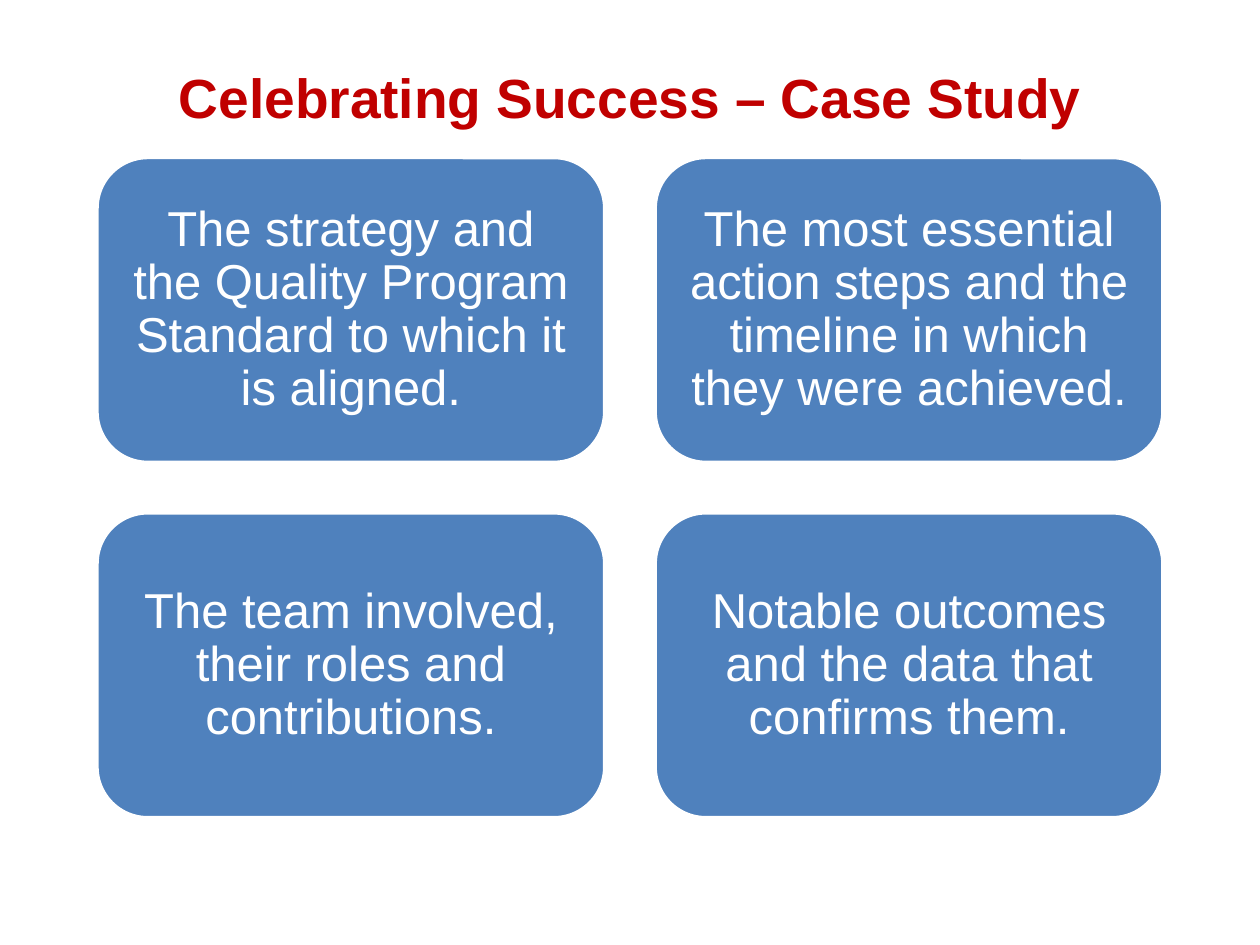
from dataclasses import dataclass

from pptx import Presentation
from pptx.dml.color import RGBColor
from pptx.enum.shapes import MSO_SHAPE
from pptx.enum.text import MSO_ANCHOR, PP_ALIGN
from pptx.util import Inches, Pt


@dataclass(frozen=True)
class Theme:
    font: str = "Arial"
    title_color: RGBColor = RGBColor(0xC0, 0x00, 0x00)
    card_color: RGBColor = RGBColor(0x4F, 0x81, 0xBD)
    light: RGBColor = RGBColor(0xFF, 0xFF, 0xFF)
    title_size: float = 31.5
    card_size: float = 28


@dataclass(frozen=True)
class Grid:
    left: float = 0.77
    top: float = 1.25
    card_width: float = 4.03
    card_height: float = 2.42
    gap: float = 0.4

    def place(self, column, row):
        left = self.left + column * (self.card_width + self.gap)
        top = self.top + row * (self.card_height + self.gap)
        return [Inches(value) for value in (left, top, self.card_width, self.card_height)]


class SlideBuilder:
    def __init__(self, slide, theme, grid):
        self.slide = slide
        self.theme = theme
        self.grid = grid

    def set_text(self, shape, text, size, color, margin=0, bold=False):
        text_frame = shape.text_frame
        text_frame.text = text
        text_frame.word_wrap = True
        text_frame.margin_left = text_frame.margin_right = Inches(margin)
        text_frame.margin_top = text_frame.margin_bottom = Inches(margin)
        paragraph = text_frame.paragraphs[0]
        paragraph.alignment = PP_ALIGN.CENTER
        font = paragraph.runs[0].font
        font.name = self.theme.font
        font.size = Pt(size)
        font.bold = bold
        font.color.rgb = color
        return text_frame

    def title(self, text):
        shape = self.slide.shapes.add_textbox(Inches(0.5), Inches(0.5), Inches(9), Inches(0.53))
        self.set_text(shape, text, self.theme.title_size, self.theme.title_color, bold=True)

    def card(self, text, column, row):
        shape = self.slide.shapes.add_shape(
            MSO_SHAPE.ROUNDED_RECTANGLE, *self.grid.place(column, row)
        )
        shape.shadow.inherit = False
        shape.fill.solid()
        shape.fill.fore_color.rgb = self.theme.card_color
        shape.line.color.rgb = self.theme.light
        shape.line.width = Pt(2)
        text_frame = self.set_text(
            shape, text, self.theme.card_size, self.theme.light, margin=0.13
        )
        text_frame.vertical_anchor = MSO_ANCHOR.MIDDLE
        text_frame.paragraphs[0].line_spacing = 0.9


CARDS = [
    "The strategy and the Quality Program Standard to which it is aligned.",
    "The most essential action steps and the timeline in which they were achieved.",
    "The team involved, their roles and contributions.",
    "Notable outcomes and the data that confirms them.",
]


def main():
    presentation = Presentation()
    presentation.slide_width = Inches(10)
    presentation.slide_height = Inches(7.5)
    slide = presentation.slides.add_slide(presentation.slide_layouts[6])
    builder = SlideBuilder(slide, Theme(), Grid())
    builder.title("Celebrating Success – Case Study")
    for index, text in enumerate(CARDS):
        row, column = divmod(index, 2)
        builder.card(text, column, row)
    presentation.save("out.pptx")


if __name__ == "__main__":
    main()
